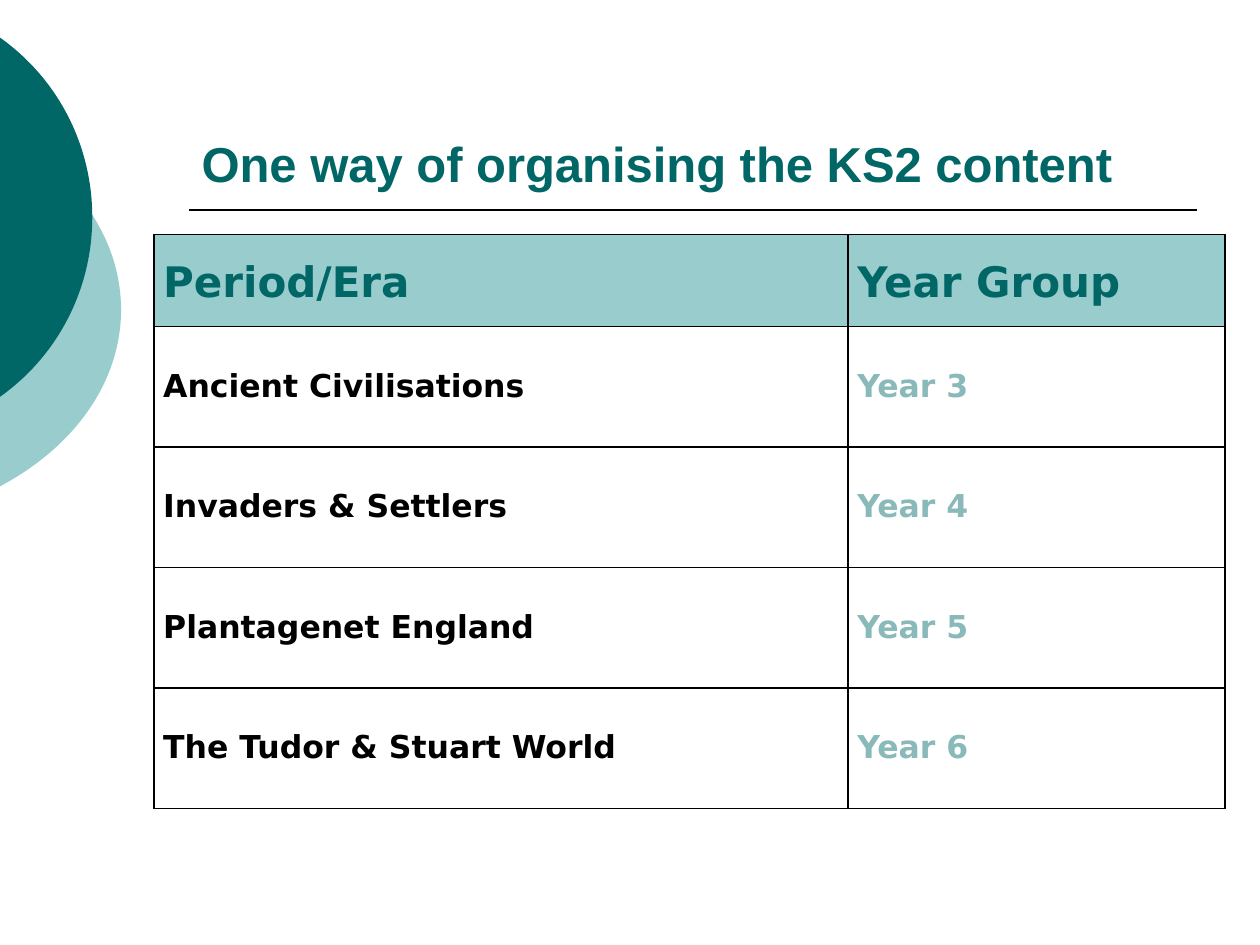
from lxml import etree
from pptx import Presentation
from pptx.dml.color import RGBColor
from pptx.enum.shapes import MSO_CONNECTOR
from pptx.enum.text import MSO_ANCHOR, PP_ALIGN
from pptx.oxml.ns import qn
from pptx.util import Cm, Pt

STRAIGHT = MSO_CONNECTOR.STRAIGHT
BOTTOM, MIDDLE = MSO_ANCHOR.BOTTOM, MSO_ANCHOR.MIDDLE
LEFT = PP_ALIGN.LEFT

TEAL, PALE, MUTED, BLACK = "006666", "99CCCC", "8AB9B9", "000000"
HEAD = ("Period/Era", "Year Group")
ROWS = (
    ("Ancient Civilisations", "Year 3"),
    ("Invaders & Settlers", "Year 4"),
    ("Plantagenet England", "Year 5"),
    ("The Tudor & Stuart World", "Year 6"),
)


def rgb(code):
    return RGBColor.from_string(code)


def add_run(para, text, font, size, color):
    run = para.add_run()
    run.text = text
    run.font.name = font
    run.font.size = Pt(size)
    run.font.bold = True
    run.font.color.rgb = rgb(color)


def add_step(track, tag, *points):
    step = etree.SubElement(track, qn(tag))
    for x, y in points:
        etree.SubElement(step, qn("a:pt"), x=str(Cm(x)), y=str(Cm(y)))


def add_disc(slide, box, half, color):
    """Fill the part of a disc right of the slide's left edge.

    The cut edge reaches half above and below the middle of the box.
    """
    left, top, width, height = box
    right, base = left + width, top + height
    corners = [(Cm(x), Cm(y)) for x, y in
               ((left, top), (right, top), (right, base), (left, base))]
    builder = slide.shapes.build_freeform(*corners[0])
    builder.add_line_segments(corners[1:], close=True)
    disc = builder.convert_to_shape()
    disc.shadow.inherit = False
    disc.fill.solid()
    disc.fill.fore_color.rgb = rgb(color)
    disc.line.fill.background()

    # python-pptx draws straight segments only, so set the curves here
    track = next(disc._element.iter(qn("a:path")))
    for step in list(track):
        track.remove(step)
    cut, mid = -left, height / 2
    bend = cut + 0.63 * right
    add_step(track, "a:moveTo", (cut, mid - half))
    add_step(track, "a:cubicBezTo", (bend, mid - 0.77 * half),
             (width, mid - 0.4 * half), (width, mid))
    add_step(track, "a:cubicBezTo", (width, mid + 0.4 * half),
             (bend, mid + 0.77 * half), (cut, mid + half))
    add_step(track, "a:close")


def add_title(slide, box, text):
    """Place the title with the rule just below it."""
    left, top, width, height = box
    title = slide.shapes.title
    title.left, title.top, title.width, title.height = map(Cm, box)
    frame = title.text_frame
    frame.word_wrap = True
    frame.vertical_anchor = BOTTOM
    para = frame.paragraphs[0]
    para.alignment = LEFT
    add_run(para, text, "Arial", 28, TEAL)

    y = Cm(top + height + 0.23)
    rule = slide.shapes.add_connector(
        STRAIGHT, Cm(left), y, Cm(left + width), y)
    rule.line.color.rgb = rgb(BLACK)
    rule.line.width = Pt(1)
    etree.SubElement(rule._element.spPr, qn("a:effectLst"))


def add_borders(cell):
    props = cell._tc.get_or_add_tcPr()
    for side in ("a:lnL", "a:lnR", "a:lnT", "a:lnB"):
        line = etree.SubElement(props, qn(side), w=str(Pt(1)))
        fill = etree.SubElement(line, qn("a:solidFill"))
        etree.SubElement(fill, qn("a:srgbClr"), val=BLACK)


def fill_cell(cell, text, size, color, back=None, foot=0.13):
    add_borders(cell)
    if back:
        cell.fill.solid()
        cell.fill.fore_color.rgb = rgb(back)
    else:
        cell.fill.background()
    cell.margin_left = cell.margin_right = Cm(0.19)
    cell.margin_top, cell.margin_bottom = 0, Cm(foot)
    cell.vertical_anchor = MIDDLE
    para = cell.text_frame.paragraphs[0]
    para.line_spacing = 1.15
    add_run(para, text, "DejaVu Sans", size, color)


def add_periods(slide, box, head=1.85, share=0.648):
    """Place the table; share is the first column's part of the width."""
    left, top, width, height = box
    table = slide.shapes.add_table(
        len(ROWS) + 1, len(HEAD), *map(Cm, box)).table
    table.first_row = table.horz_banding = False
    for col, part in zip(table.columns, (share, 1 - share)):
        col.width = Cm(width * part)
    for i, row in enumerate(table.rows):
        row.height = Cm((height - head) / len(ROWS) if i else head)
    for j, text in enumerate(HEAD):
        fill_cell(table.cell(0, j), text, 24, TEAL, PALE, foot=0.05)
    for i, texts in enumerate(ROWS, 1):
        for j, color in enumerate((BLACK, MUTED)):
            fill_cell(table.cell(i, j), texts[j], 18, color)


def main():
    deck = Presentation()
    deck.slide_width, deck.slide_height = Cm(25.4), Cm(19.05)
    slide = deck.slides.add_slide(deck.slide_layouts[5])
    add_disc(slide, (-8.99, 1.9, 11.43, 8.69), 3.56, PALE)
    add_disc(slide, (-6.73, 0, 8.59, 8.76), 3.62, TEAL)
    add_title(slide, (3.81, 0.84, 20.32, 3.17),
              "One way of organising the KS2 content")
    add_periods(slide, (3.1, 4.73, 21.6, 11.57))
    deck.save("out.pptx")


if __name__ == "__main__":
    main()
